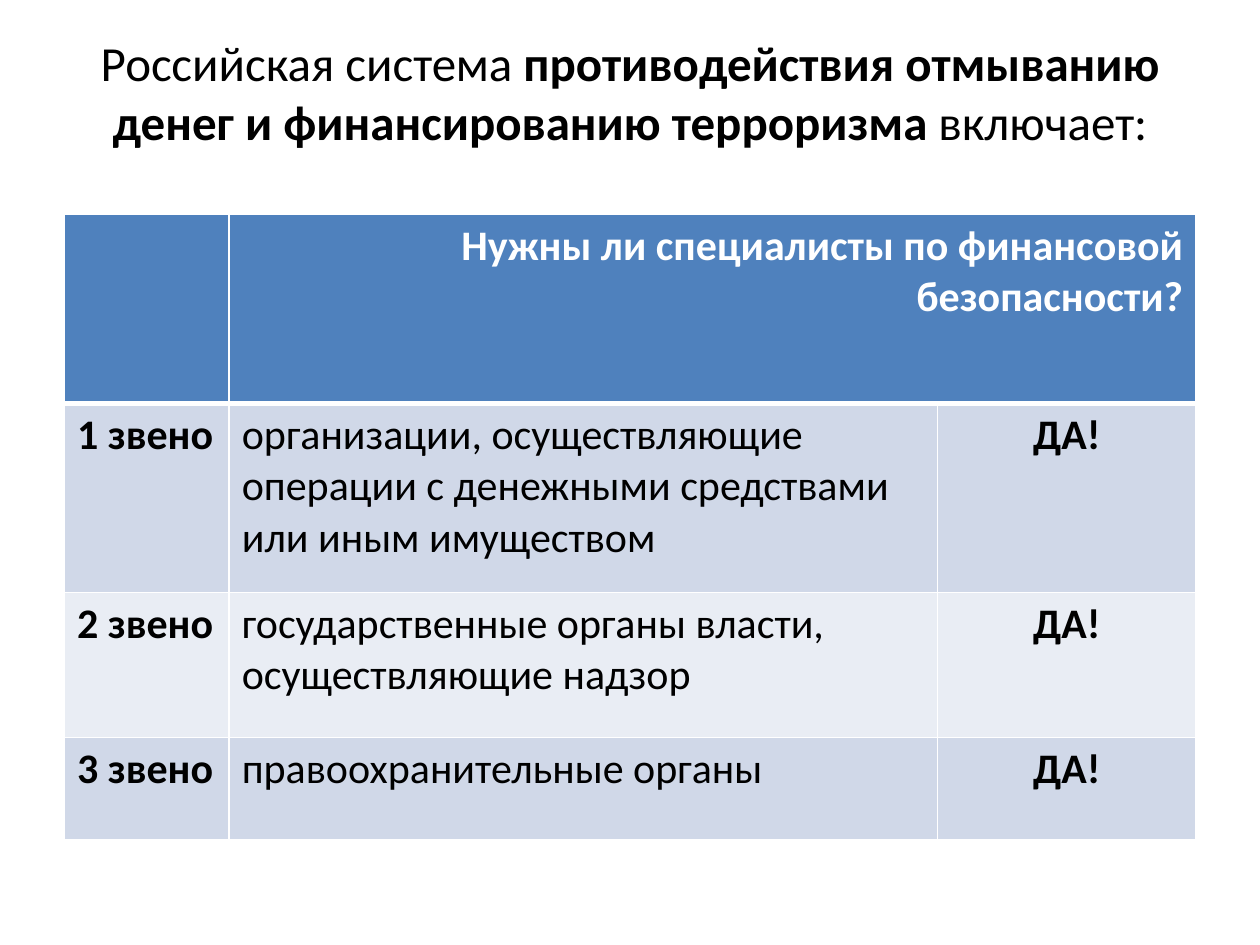
from lxml.etree import SubElement
from pptx import Presentation
from pptx.dml.color import RGBColor
from pptx.enum.text import MSO_ANCHOR as Anchor, PP_ALIGN as Align
from pptx.oxml.ns import qn
from pptx.util import Pt

COLORS = {"text": "000000", "white": "FFFFFF", "header": "4F81BD",
          "odd": "D0D8E8", "even": "E9EDF4"}


def add_span(para, text, size, color, bold):
    span = para.add_run()
    span.text = text
    span.font.name = "Calibri"
    span.font.size = Pt(size)
    span.font.bold = bold
    span.font.color.rgb = RGBColor.from_string(COLORS[color])


def style_cell(cell, fill, top, bottom):
    """Give a cell its white borders, then its fill, in schema order."""
    props = cell._tc.get_or_add_tcPr()
    for side, width in (("L", 1), ("R", 1), ("T", top), ("B", bottom)):
        line = SubElement(props, qn(f"a:ln{side}"), w=str(Pt(width)))
        solid = SubElement(line, qn("a:solidFill"))
        SubElement(solid, qn("a:srgbClr"), val=COLORS["white"])
    cell.fill.solid()
    cell.fill.fore_color.rgb = RGBColor.from_string(COLORS[fill])


deck = Presentation()
deck.slide_width, deck.slide_height = Pt(720), Pt(540)
page = deck.slides.add_slide(deck.slide_layouts[5])

# Title, raised within its box by the bottom inset
title = page.shapes.title
title.left, title.top, title.width, title.height = Pt(36), Pt(21.6), Pt(648), Pt(90)
frame = title.text_frame
frame.word_wrap = True
frame.vertical_anchor = Anchor.MIDDLE
frame.margin_bottom = Pt(32)
para = frame.paragraphs[0]
para.alignment = Align.CENTER
for text, bold in (
    ("Российская система ", False),
    ("противодействия отмыванию денег и финансированию терроризма ", True),
    ("включает:", False),
):
    add_span(para, text, 28, "text", bold)

# Table grid
widths = [94.1, 404.8, 147.6]
heights = [108, 108, 82.8, 58.3]
table = page.shapes.add_table(len(heights), len(widths), Pt(36.9), Pt(122.6),
                              Pt(sum(widths)), Pt(sum(heights))).table
for column, width in zip(table.columns, widths):
    column.width = Pt(width)
for row, height in zip(table.rows, heights):
    row.height = Pt(height)

# Header row
for cell in table.rows[0].cells:
    style_cell(cell, "header", 1, 3)
question = table.cell(0, 1)
question.merge(table.cell(0, 2))
para = question.text_frame.paragraphs[0]
para.alignment = Align.RIGHT
add_span(para, "Нужны ли специалисты по финансовой безопасности?", 24, "white", True)

# Links of the system
links = [
    "организации, осуществляющие операции с денежными средствами или иным имуществом",
    "государственные органы власти, осуществляющие надзор",
    "правоохранительные органы",
]
for number, link in enumerate(links, start=1):
    entries = [
        (f"{number} звено", True, Align.LEFT),
        (link, False, Align.LEFT),
        ("ДА!", True, Align.CENTER),
    ]
    for cell, (text, bold, align) in zip(table.rows[number].cells, entries):
        style_cell(cell, "odd" if number % 2 else "even", 3 if number == 1 else 1, 1)
        para = cell.text_frame.paragraphs[0]
        para.alignment = align
        add_span(para, text, 24, "text", bold)

deck.save("out.pptx")
